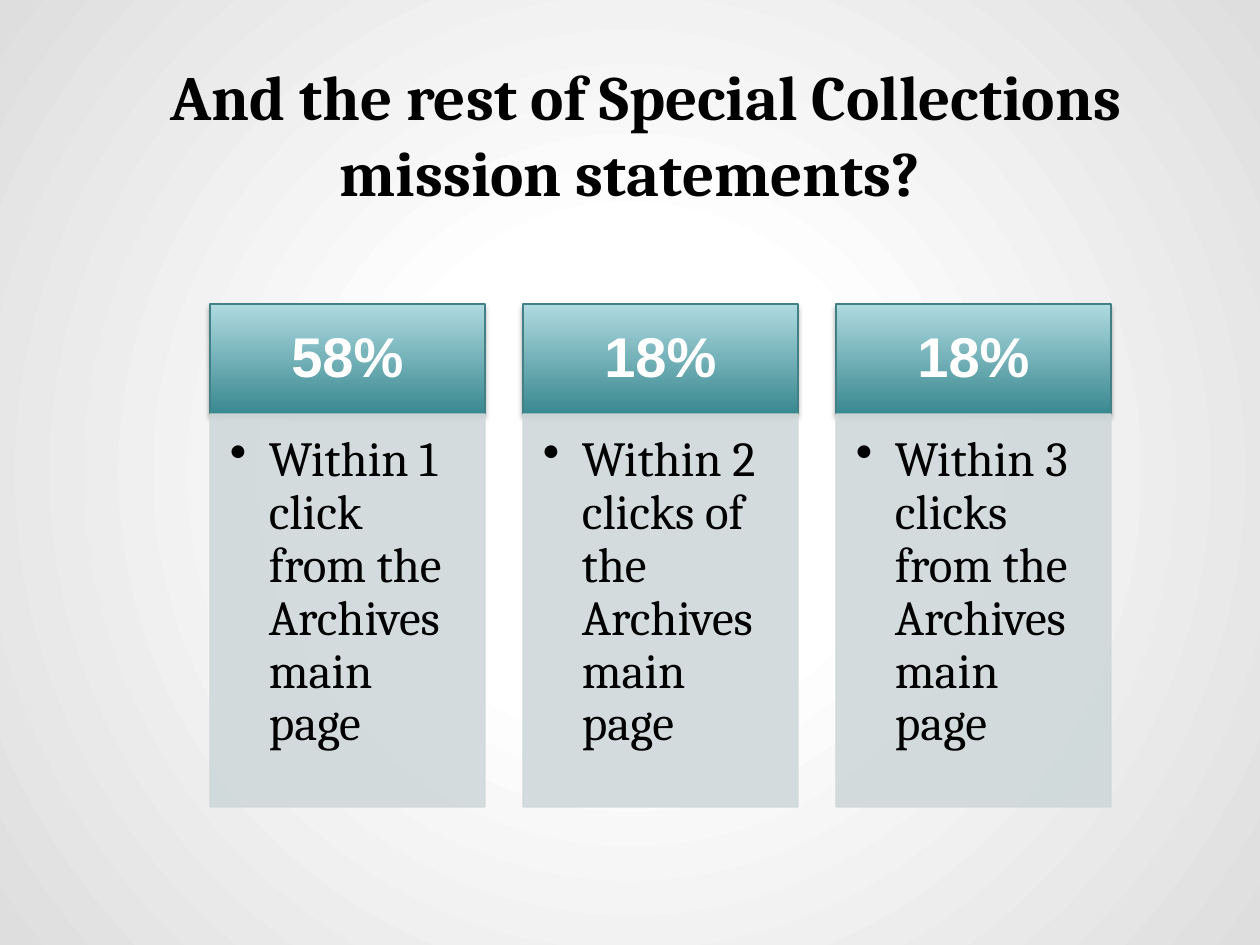
from pptx import Presentation
from pptx.dml.color import RGBColor
from pptx.enum.shapes import MSO_SHAPE
from pptx.enum.text import MSO_ANCHOR, MSO_AUTO_SIZE, PP_ALIGN
from pptx.oxml import parse_xml
from pptx.oxml.ns import qn
from pptx.util import Pt
from lxml import etree

RECT = MSO_SHAPE.RECTANGLE
TOP, MIDDLE, BOTTOM = MSO_ANCHOR.TOP, MSO_ANCHOR.MIDDLE, MSO_ANCHOR.BOTTOM
LEFT, CENTER = PP_ALIGN.LEFT, PP_ALIGN.CENTER
NS = 'xmlns:a="http://schemas.openxmlformats.org/drawingml/2006/main"'

TITLE = "And the rest of Special Collections mission statements?"
COLUMNS = [
    ("58%", "Within 1 click from the Archives main page"),
    ("18%", "Within 2 clicks of the Archives main page"),
    ("18%", "Within 3 clicks from the Archives main page"),
]

THEME = {
    "text": "000000", "head_text": "FFFFFF", "head_line": "438086",
    "head_bottom": "398890", "head_top": "AFDAE0", "body": "CFD8D9",
    "bg_center": "FFFFFF", "bg_edge": "DEDEDE",
    "serif": "Cambria", "sans": "Arial",
    "title_size": 36, "head_size": 32, "body_size": 28, "line": 0.75,
}

SLIDE_W, SLIDE_H = 1260, 945
COL_X, COL_W, COL_GAP = 210, 275, 38
HEAD_Y, HEAD_H, BODY_H = 304, 110, 393


def px(n):
    return round(n * 914400 / 126)


def rgb(name):
    return RGBColor.from_string(THEME[name])


def write(shape, text, size, font="serif", color="text", bold=False, align=LEFT,
          anchor=TOP, insets=(13, 13, 13, 13), margin=0, indent=0,
          spacing=1.0, bullet=False):
    tf = shape.text_frame
    tf.word_wrap = True
    tf.auto_size = MSO_AUTO_SIZE.NONE
    tf.vertical_anchor = anchor
    tf.margin_left, tf.margin_top, tf.margin_right, tf.margin_bottom = map(px, insets)
    p = tf.paragraphs[0]
    p.alignment, p.line_spacing = align, spacing
    p.space_before = Pt(0)
    pPr = p._p.get_or_add_pPr()
    pPr.set("marL", str(px(margin)))
    pPr.set("indent", str(px(indent)))
    if bullet:
        etree.SubElement(pPr, qn("a:buChar")).set("char", "•")
    r = p.add_run()
    r.text = text
    r.font.name, r.font.size, r.font.bold = THEME[font], Pt(THEME[size]), bold
    r.font.color.rgb = rgb(color)


def add_box(s, x, y, w, h, line):
    sp = s.shapes.add_shape(RECT, px(x), px(y), px(w), px(h))
    sp.shadow.inherit = False
    sp.line.color.rgb = rgb(line)
    sp.line.width = Pt(THEME["line"])
    return sp


def add_head(s, x, text):
    sp = add_box(s, x, HEAD_Y, COL_W, HEAD_H, "head_line")
    sp.fill.gradient()
    sp.fill.gradient_angle = 90
    for stop, name in zip(sp.fill.gradient_stops, ("head_bottom", "head_top")):
        stop.color.rgb = rgb(name)
    sp._element.spPr.find(qn("a:effectLst")).append(parse_xml(
        f'<a:outerShdw {NS} blurRad="{Pt(3.1)}" dist="{Pt(1.8)}" dir="5400000" '
        'rotWithShape="0"><a:srgbClr val="000000"><a:alpha val="35000"/>'
        '</a:srgbClr></a:outerShdw>'))
    write(sp, text, "head_size", font="sans", color="head_text", bold=True,
          align=CENTER, anchor=MIDDLE, insets=(32, 18, 32, 18), spacing=0.9)


def add_body(s, x, text):
    sp = add_box(s, x, HEAD_Y + HEAD_H, COL_W, BODY_H, "body")
    sp.fill.solid()
    sp.fill.fore_color.rgb = rgb("body")
    for clr in sp._element.spPr.iter(qn("a:srgbClr")):
        etree.SubElement(clr, qn("a:alpha")).set("val", "90000")
    write(sp, text, "body_size", insets=(20, 20, 28, 30), margin=39, indent=-39,
          spacing=0.9, bullet=True)


def set_radial_background(s):
    s.background.fill.gradient()
    old = s._element.cSld.find(".//" + qn("a:gradFill"))
    stops = "".join(
        f'<a:gs pos="{pos * 1000}"><a:srgbClr val="{THEME[name]}"/></a:gs>'
        for pos, name in ((0, "bg_center"), (30, "bg_center"), (100, "bg_edge")))
    old.getparent().replace(old, parse_xml(
        f'<a:gradFill {NS} rotWithShape="1"><a:gsLst>{stops}</a:gsLst>'
        '<a:path path="circle"><a:fillToRect l="50000" t="50000" r="50000" '
        'b="50000"/></a:path></a:gradFill>'))


def main():
    prs = Presentation()
    prs.slide_width, prs.slide_height = px(SLIDE_W), px(SLIDE_H)
    s = prs.slides.add_slide(prs.slide_layouts[5])
    set_radial_background(s)

    title = s.shapes.title
    title.left, title.top, title.width, title.height = map(px, (63, 92, 1134, 130))
    write(title, TITLE, "title_size", bold=True, align=CENTER, anchor=BOTTOM, indent=32)

    for i, (share, detail) in enumerate(COLUMNS):
        x = COL_X + i * (COL_W + COL_GAP)
        add_head(s, x, share)
        add_body(s, x, detail)

    prs.save("out.pptx")


if __name__ == "__main__":
    main()
